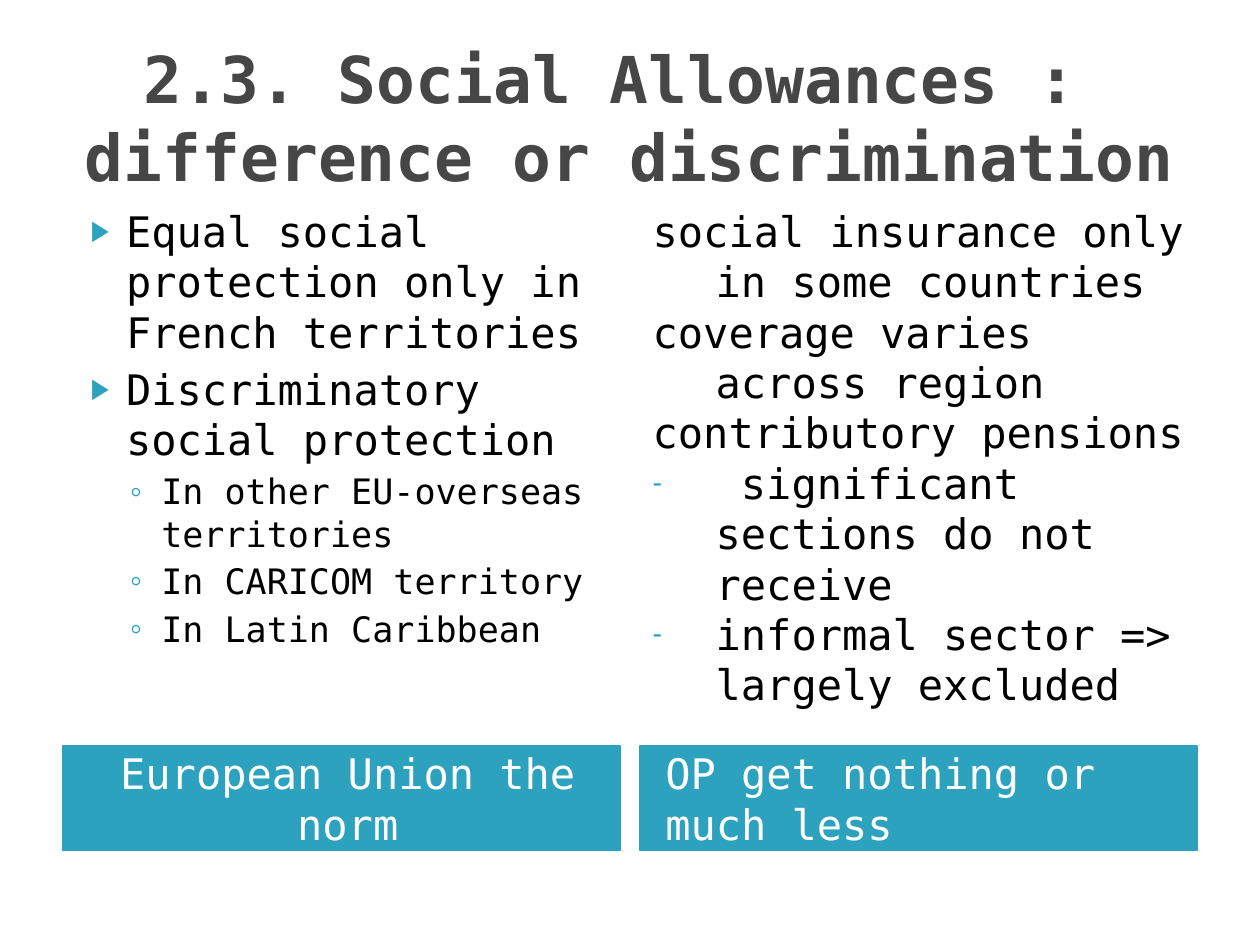
from lxml.etree import SubElement
from pptx import Presentation
from pptx.dml.color import RGBColor
from pptx.enum.text import MSO_ANCHOR as Anchor, MSO_AUTO_SIZE as Fit, PP_ALIGN as Align
from pptx.oxml.ns import qn
from pptx.util import Inches, Pt

FONT = "DejaVu Sans Mono"
TEAL, GREY, BLACK, WHITE = "2DA2BF", "464646", "000000", "FFFFFF"

TITLE = "2.3. Social Allowances : \ndifference or discrimination"
# style: level, size, space before, left indent, first-line indent, bullet, bullet percent
STYLES = {
    "main": (0, 24, 4, 0.4, -0.28, "▶", 68),
    "sub": (1, 20, 3.2, 0.68, -0.25, "◦", 100),
    "plain": (0, 24, 0, 0.5, -0.5, None, 100),
    "dash": (0, 24, 0, 0.5, -0.5, "-", 68),
}
COLUMNS = [
    {
        "band": "European Union the norm",
        "align": Align.CENTER,
        "list": [
            ("main", "Equal social protection only in French territories"),
            ("main", "Discriminatory social protection"),
            ("sub", "In other EU-overseas territories"),
            ("sub", "In CARICOM territory"),
            ("sub", "In Latin Caribbean"),
        ],
    },
    {
        "band": "OP get nothing or much less",
        "align": Align.LEFT,
        "list": [
            ("plain", "social insurance only in some countries"),
            ("plain", "coverage varies across region"),
            ("plain", "contributory pensions"),
            ("dash", " significant sections do not receive"),
            ("dash", "informal sector => largely excluded"),
        ],
    },
]
LEFT, WIDTH, GAP = 0.5, 4.42, 0.16


def rgb(code):
    return RGBColor.from_string(code)


def place(shape, x, y, w, h, anchor):
    """Move a placeholder and return its text frame."""
    shape.left, shape.top, shape.width, shape.height = map(Inches, (x, y, w, h))
    frame = shape.text_frame
    frame.word_wrap = True
    frame.auto_size = Fit.NONE
    frame.vertical_anchor = anchor
    return frame


def write(para, text, size, color, align=Align.LEFT, bold=False, before=0):
    para.text = text
    para.alignment = align
    para.space_before = Pt(before)
    font = para.font
    font.name, font.size, font.bold = FONT, Pt(size), bold
    font.color.rgb = rgb(color)


def indent(para, left, first, mark, percent):
    """Set the hanging indent and the bullet, if there is one."""
    props = para._p.get_or_add_pPr()
    props.set("marL", str(Inches(left)))
    props.set("indent", str(Inches(first)))
    if not mark:
        SubElement(props, qn("a:buNone"))
        return
    SubElement(SubElement(props, qn("a:buClr")), qn("a:srgbClr"), val=TEAL)
    SubElement(props, qn("a:buSzPct"), val=str(percent * 1000))
    SubElement(props, qn("a:buChar"), char=mark)


def fill_list(frame, items):
    for i, (style, text) in enumerate(items):
        level, size, before, left, first, mark, percent = STYLES[style]
        para = frame.add_paragraph() if i else frame.paragraphs[0]
        para.level = level
        indent(para, left, first, mark, percent)
        write(para, text, size, BLACK, before=before if i else 0)


def fill_band(shape, frame, text, align):
    shape.fill.solid()
    shape.fill.fore_color.rgb = rgb(TEAL)
    shape.line.color.rgb = rgb(TEAL)
    shape.line.width = Pt(0.75)
    frame.margin_left = Inches(0.2)
    write(frame.paragraphs[0], text, 24, WHITE, align)


def main():
    deck = Presentation()
    deck.slide_width, deck.slide_height = Inches(10), Inches(7.5)
    slide = deck.slides.add_slide(deck.slide_layouts.get_by_name("Comparison"))
    title, *parts = slide.placeholders

    frame = place(title, LEFT, 0.3, 9, 1.25, Anchor.MIDDLE)
    write(frame.paragraphs[0], TITLE, 36.9, GREY, Align.CENTER, bold=True)

    for i, col in enumerate(COLUMNS):
        band, body = parts[2 * i:2 * i + 2]
        x = LEFT + i * (WIDTH + GAP)
        frame = place(band, x, 5.92, WIDTH, 0.83, Anchor.MIDDLE)
        fill_band(band, frame, col["band"], col["align"])
        fill_list(place(body, x, 1.58, WIDTH, 4.31, Anchor.TOP), col["list"])

    deck.save("out.pptx")


if __name__ == "__main__":
    main()
